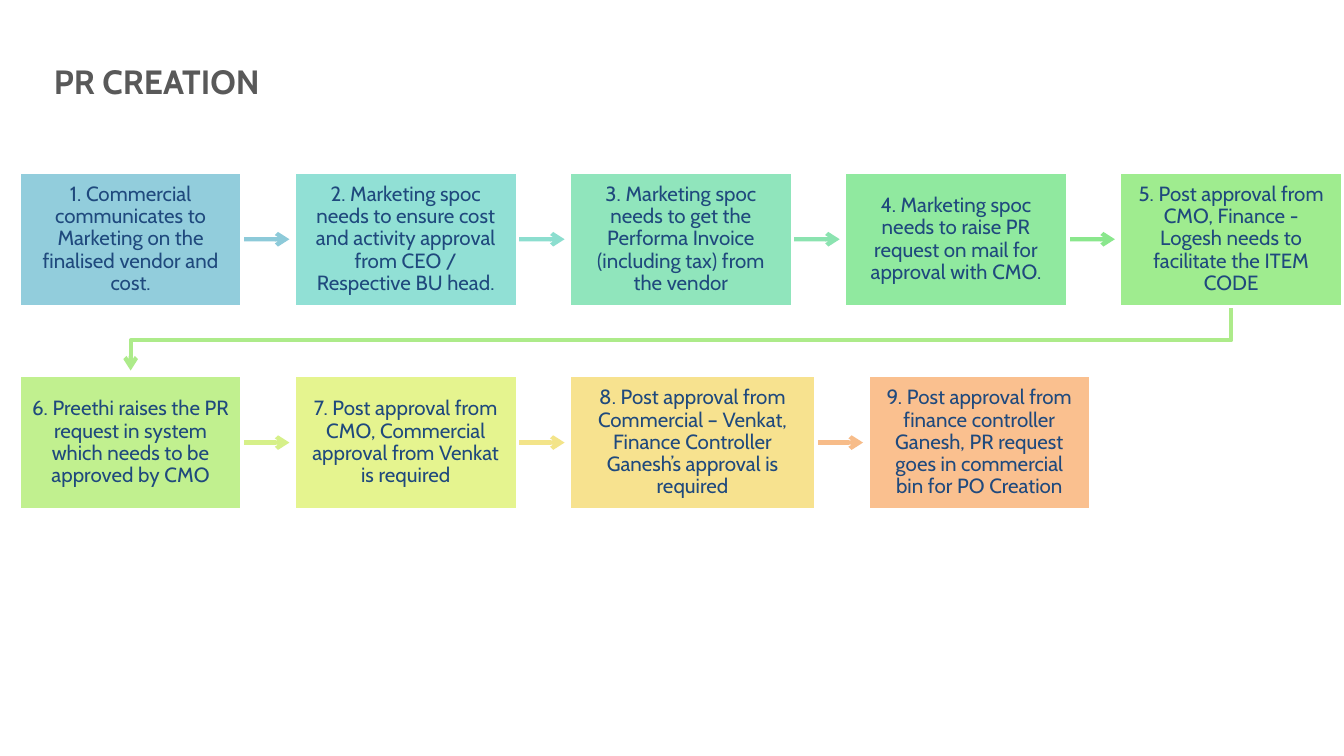
import dataclasses

import pptx
import pptx.dml.color
import pptx.enum.shapes
import pptx.enum.text
import pptx.oxml.ns
import pptx.util
from lxml import etree

Cm = pptx.util.Cm
Pt = pptx.util.Pt
rgb = pptx.dml.color.RGBColor.from_string


@dataclasses.dataclass(frozen=True)
class Theme:
    font: str = "Cabin"
    title_size: int = 18
    step_size: int = 11
    title: str = "595959"
    text: str = "1F497D"
    border: str = "FFFFFF"
    return_arrow: str = "ADEB8A"


theme = Theme()


def style_arrow(arrow, color):
    arrow.line.color.rgb = rgb(color)
    arrow.line.width = Pt(2.25)
    line = arrow.line._get_or_add_ln()
    etree.SubElement(line, pptx.oxml.ns.qn("a:tailEnd"), type="arrow")
    # An empty effect list keeps the theme's shadow off
    etree.SubElement(arrow._element.spPr, pptx.oxml.ns.qn("a:effectLst"))


def style_text(box, text, size, color):
    frame = box.text_frame
    frame.word_wrap = True
    frame.vertical_anchor = pptx.enum.text.MSO_ANCHOR.MIDDLE
    para = frame.paragraphs[0]
    para.text = text
    para.font.name = theme.font
    para.font.size = Pt(size)
    para.font.color.rgb = rgb(color)
    return para


# Each step: text, box colour, colour of the arrow to the next step, box width
WIDTH, WIDE = 4.22, 4.66
rows = [
    (3.25, [
        ("1. Commercial communicates to Marketing on the finalised vendor and cost.",
         "92CDDC", "8DCAD9", WIDTH),
        ("2. Marketing spoc needs to ensure cost and activity approval from CEO / "
         "Respective BU head.", "91E0D5", "8CDECF", WIDTH),
        ("3. Marketing spoc needs to get the Performa Invoice (including tax) from the vendor",
         "90E5BC", "8BE3B0", WIDTH),
        ("4. Marketing spoc needs to raise PR request on mail for approval with CMO.",
         "90E99F", "8AE78D", WIDTH),
        ("5. Post approval from CMO, Finance - Logesh needs to facilitate the ITEM CODE",
         "9FEC8F", None, WIDTH),
    ]),
    (7.09, [
        ("6. Preethi raises the PR request in system which needs to be approved by CMO",
         "C1F08F", "D6F089", WIDTH),
        ("7. Post approval from CMO, Commercial approval from Venkat is required",
         "E5F48F", "F3E489", WIDTH),
        ("8. Post approval from Commercial – Venkat, Finance Controller Ganesh’s "
         "approval is required", "F7E28F", "F7BC89", WIDE),
        ("9. Post approval from finance controller Ganesh, PR request goes in "
         "commercial bin for PO Creation", "FAC08F", None, WIDTH),
    ]),
]
LEFT, HEIGHT, GAP, ARROW = 0.36, 2.54, 0.98, 0.89

deck = pptx.Presentation()
deck.slide_width, deck.slide_height = Cm(25.4), Cm(14.28)
page = deck.slides.add_slide(deck.slide_layouts[6])
shapes = page.shapes

title = shapes.add_textbox(Cm(1.02), Cm(1.02), Cm(20.93), Cm(1.02))
title.text_frame.margin_left = 0
style_text(title, "PR CREATION", theme.title_size, theme.title).font.bold = True

# Return arrow from under step 5 to above step 6
first_x = LEFT + WIDTH / 2
last_x = first_x + 4 * (WIDTH + GAP)
route = [(last_x, 5.78), (last_x, 6.43), (first_x, 6.43), (first_x, 7)]
points = [(Cm(x), Cm(y)) for x, y in route]
builder = shapes.build_freeform(*points[0])
builder.add_line_segments(points[1:], close=False)
return_arrow = builder.convert_to_shape()
return_arrow.fill.background()
style_arrow(return_arrow, theme.return_arrow)

for top, steps in rows:
    left = LEFT
    for text, fill, arrow_color, width in steps:
        right, middle = left + width, top + HEIGHT / 2
        # The arrow lies behind the box, whose white border trims its start
        if arrow_color:
            arrow = shapes.add_connector(
                pptx.enum.shapes.MSO_CONNECTOR.STRAIGHT,
                Cm(right), Cm(middle), Cm(right + ARROW), Cm(middle))
            style_arrow(arrow, arrow_color)

        box = shapes.add_shape(pptx.enum.shapes.MSO_SHAPE.RECTANGLE,
                               Cm(left), Cm(top), Cm(width), Cm(HEIGHT))
        box.shadow.inherit = False
        box.fill.solid()
        box.fill.fore_color.rgb = rgb(fill)
        box.line.color.rgb = rgb(theme.border)
        box.line.width = Pt(2)
        frame = box.text_frame
        frame.margin_left = frame.margin_right = Cm(0.23)
        frame.margin_top = frame.margin_bottom = Cm(0.23)
        para = style_text(box, text, theme.step_size, theme.text)
        para.alignment = pptx.enum.text.PP_ALIGN.CENTER
        para.line_spacing = 0.9

        if arrow_color:
            arrow.begin_connect(box, 3)
        left = right + GAP

deck.save("out.pptx")
